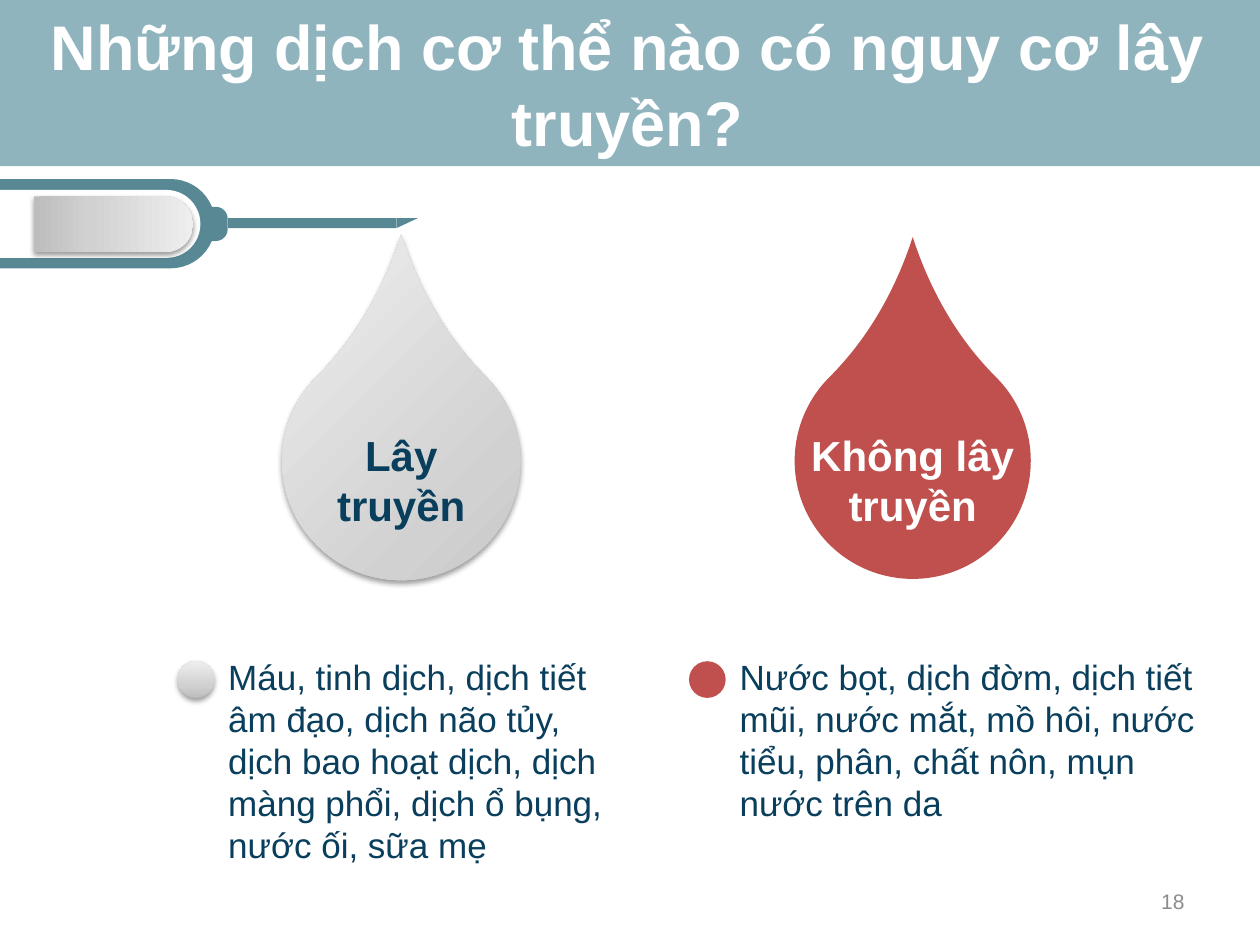
from lxml import etree
from pptx import Presentation
from pptx.dml.color import RGBColor
from pptx.enum import shapes, text
from pptx.oxml import ns
from pptx.util import Cm, Pt

COLORS = {
    "band": "90B4BE", "syringe": "588894", "white": "FFFFFF", "red": "C0504D",
    "ink": "093F5C", "number": "8C8C8C", "shadow": "000000",
}
SILVER = [(0, "BDBDBD"), (35, "D1D1D1"), (100, "EEEEEE")]
KIND = shapes.MSO_SHAPE
ALIGN = text.PP_ALIGN


def add_node(parent, tag, **attributes):
    """Append a DrawingML element and return it."""
    values = {name: str(value) for name, value in attributes.items()}
    return etree.SubElement(parent, ns.qn(tag), values)


def fill_silver(shape):
    """Give a shape the upward silver gradient and a soft shadow below."""
    shape.fill.gradient()
    shape.fill.gradient_angle = 90
    stops = shape._element.spPr.find(".//" + ns.qn("a:gsLst"))
    for stop in list(stops):
        stops.remove(stop)
    for position, color in SILVER:
        stop = add_node(stops, "a:gs", pos=position * 1000)
        add_node(stop, "a:srgbClr", val=color)
    effects = shape._element.spPr.find(ns.qn("a:effectLst"))
    shadow = add_node(effects, "a:outerShdw", blurRad=Pt(3.1), dist=Pt(1.6),
                      dir=5400000, rotWithShape=0)
    color = add_node(shadow, "a:srgbClr", val=COLORS["shadow"])
    add_node(color, "a:alpha", val=38000)


def add_part(parent, kind, box, fill, rotation=0, adjustments=()):
    """Add a borderless shape that covers the box as seen after rotation."""
    left, top, width, height = box
    if rotation == 90:
        left, top = left + (width - height) / 2, top + (height - width) / 2
        width, height = height, width
    shape = parent.add_shape(kind, Cm(left), Cm(top), Cm(width), Cm(height))
    shape.rotation = rotation
    for index, value in enumerate(adjustments):
        shape.adjustments[index] = value
    shape.line.fill.background()
    shape.shadow.inherit = False
    if fill == "silver":
        fill_silver(shape)
    else:
        shape.fill.solid()
        shape.fill.fore_color.rgb = RGBColor.from_string(COLORS[fill])
    return shape


def add_text(slide, words, box, size=20, color="ink", bold=False,
             align=ALIGN.LEFT, anchor=text.MSO_ANCHOR.TOP):
    """Add a wrapped text box with one formatted paragraph."""
    frame = slide.shapes.add_textbox(*map(Cm, box)).text_frame
    frame.word_wrap = True
    frame.vertical_anchor = anchor
    paragraph = frame.paragraphs[0]
    paragraph.alignment = align
    run = paragraph.add_run()
    run.text = words
    run.font.name = "Arial"
    run.font.size = Pt(size)
    run.font.bold = bold
    run.font.color.rgb = RGBColor.from_string(COLORS[color])


def add_header(slide, box, title):
    """Draw the title band with its centred title."""
    left, top, width, height = box
    add_part(slide.shapes, KIND.RECTANGLE, box, "band")
    add_text(slide, title, (left, top + 0.03, width - 0.1, height - 0.18),
             size=36, color="white", bold=True, align=ALIGN.CENTER)


def add_syringe(slide, left, top):
    """Draw the grouped syringe pointing right from its top left corner."""
    group = slide.shapes.add_group_shape()
    tube = KIND.ROUND_2_SAME_RECTANGLE
    parts = [
        (tube, (0, 0, 4.34, 1.8), "syringe", 90, (0.5, 0)),
        (tube, (0, 0.22, 4.04, 1.37), "white", 90, (0.5, 0)),
        (tube, (4.11, 0.56, 0.48, 0.69), "syringe", 90, (0.5, 0)),
        (KIND.RECTANGLE, (4.6, 0.79, 3.38, 0.2), "syringe", 0, ()),
        (KIND.RIGHT_TRIANGLE, (7.99, 0.79, 0.43, 0.2), "syringe", 90, ()),
        (tube, (0.69, 0.35, 3.2, 1.12), "silver", 90, (0.5, 0)),
    ]
    for kind, (x, y, width, height), fill, rotation, adjustments in parts:
        add_part(group.shapes, kind, (left + x, top + y, width, height),
                 fill, rotation, adjustments)


def add_drop_column(slide, box, label, details, fill, label_color,
                    drop_size, label_width):
    """Draw a labelled drop above a matching dot and its description."""
    left, top, width, height = box
    center_x, center_y = left + 4.51, top + 2.4
    add_part(slide.shapes, KIND.TEAR,
             (center_x - drop_size / 2, center_y - drop_size / 2,
              drop_size, drop_size), fill, 315, (1.34,))
    add_part(slide.shapes, KIND.OVAL, (left, top + 6.44, 0.74, 0.74), fill)
    add_text(slide, label,
             (center_x - label_width / 2, top + 1.64, label_width, 2.31),
             size=24, color=label_color, bold=True, align=ALIGN.CENTER)
    add_text(slide, details,
             (left + 0.77, top + 6.19, width - 0.77, height - 6.19))


def main():
    """Build the slide and save it."""
    presentation = Presentation()
    presentation.slide_width, presentation.slide_height = Cm(25.4), Cm(19.05)
    slide = presentation.slides.add_slide(presentation.slide_layouts[6])
    add_header(slide, (0, 0, 25.4, 3.35),
               "Những dịch cơ thể nào có nguy cơ lây truyền?")
    add_syringe(slide, 0, 3.61)
    add_drop_column(
        slide, (3.58, 6.89, 8.87, 10.71), "Lây truyền",
        "Máu, tinh dịch, dịch tiết âm đạo, dịch não tủy, dịch bao hoạt dịch, "
        "dịch màng phổi, dịch ổ bụng, nước ối, sữa mẹ",
        "silver", "ink", drop_size=4.81, label_width=3.5)
    add_drop_column(
        slide, (13.89, 6.89, 10.6, 9.88), "Không lây truyền",
        "Nước bọt, dịch đờm, dịch tiết mũi, nước mắt, mồ hôi, nước tiểu, "
        "phân, chất nôn, mụn nước trên da",
        "red", "white", drop_size=4.76, label_width=4.78)
    add_text(slide, "18", (18.2, 17.66, 5.93, 1.01), size=12, color="number",
             align=ALIGN.RIGHT, anchor=text.MSO_ANCHOR.MIDDLE)
    presentation.save("out.pptx")


if __name__ == "__main__":
    main()
